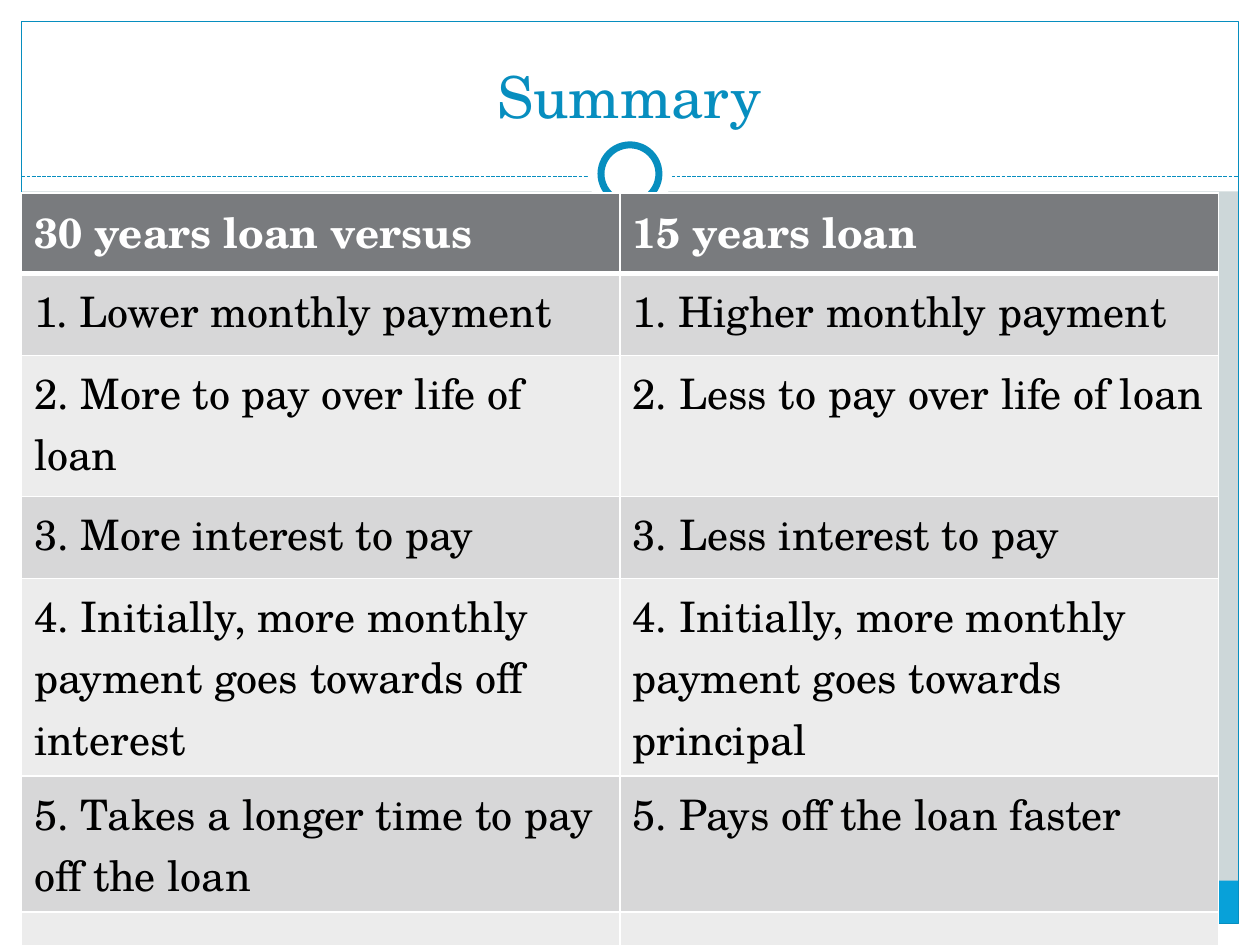
from dataclasses import dataclass

from lxml import etree
from pptx import Presentation
from pptx import util as u
from pptx.dml.color import RGBColor
from pptx.enum import dml, shapes, text
from pptx.oxml import ns


@dataclass(frozen=True)
class Theme:
    font: str = "TeX Gyre Schola"
    background: str = "CDD7D9"
    white: str = "FFFFFF"
    black: str = "000000"
    accent: str = "078EBF"
    footer: str = "08A1D9"
    header: str = "797B7E"
    bands: tuple = ("D7D7D8", "ECECEC")
    title_size: int = 33
    table_size: int = 24


THEME = Theme()
WIDTH, HEIGHT, MARGIN = 10, 7.5, 0.17
INNER_WIDTH = WIDTH - 2 * MARGIN
DIVIDER_Y = 1.4
RING_Y = 1.38

ROWS = (
    ("30 years loan versus", "15 years loan"),
    ("1. Lower monthly payment", "1. Higher monthly payment"),
    ("2. More to pay over life of loan", "2. Less to pay over life of loan"),
    ("3. More interest to pay", "3. Less interest to pay"),
    ("4. Initially, more monthly payment goes towards off interest",
     "4. Initially, more monthly payment goes towards principal"),
    ("5. Takes a longer time to pay off the loan", "5. Pays off the loan faster"),
    ("", ""),
)
# Each row is tall enough for its wrapped lines.
ROW_HEIGHTS = (0.64, 0.65, 1.12, 0.65, 1.57, 1.08, 0.65)


def rgb(color):
    return RGBColor.from_string(color)


def set_values(target, values):
    for name, value in values.items():
        setattr(target, name, value)


def add_block(slide, box, fill=None, line=None, weight=0.75,
              kind=shapes.MSO_SHAPE.RECTANGLE):
    shape = slide.shapes.add_shape(kind, *map(u.Inches, box))
    shape.shadow.inherit = False
    if fill:
        shape.fill.solid()
        shape.fill.fore_color.rgb = rgb(fill)
    else:
        shape.fill.background()
    if line:
        shape.line.color.rgb = rgb(line)
        shape.line.width = u.Pt(weight)
    else:
        shape.line.fill.background()


def add_circle(slide, diameter, **style):
    """Add a circle centred on the divider."""
    box = ((WIDTH - diameter) / 2, RING_Y - diameter / 2, diameter, diameter)
    add_block(slide, box, kind=shapes.MSO_SHAPE.OVAL, **style)


def add_divider(slide):
    ends = (MARGIN, DIVIDER_Y, WIDTH - MARGIN, DIVIDER_Y)
    line = slide.shapes.add_connector(
        shapes.MSO_CONNECTOR.STRAIGHT, *map(u.Inches, ends))
    line.line.color.rgb = rgb(THEME.accent)
    set_values(line.line, {"width": u.Pt(0.75),
                           "dash_style": dml.MSO_LINE.SQUARE_DOT})
    etree.SubElement(line._element.spPr, ns.qn("a:effectLst"))


def write(paragraph, words, size, color, bold=False):
    run = paragraph.add_run()
    run.text = words
    set_values(run.font, {"name": THEME.font, "size": u.Pt(size), "bold": bold})
    run.font.color.rgb = rgb(color)


def add_title(slide, words):
    box = slide.shapes.add_textbox(*map(u.Inches, (0.33, 0.25, 9.33, 0.83)))
    set_values(box.text_frame, {"word_wrap": True,
                                "vertical_anchor": text.MSO_ANCHOR.BOTTOM})
    paragraph = box.text_frame.paragraphs[0]
    paragraph.alignment = text.PP_ALIGN.CENTER
    write(paragraph, words, THEME.title_size, THEME.accent)


def set_borders(cell, bottom):
    """Draw white cell borders; they must precede the fill in the cell XML."""
    properties = cell._tc.get_or_add_tcPr()
    weights = {"lnL": 1, "lnR": 1, "lnT": 1, "lnB": bottom}
    for position, (side, weight) in enumerate(weights.items()):
        border = etree.Element(ns.qn(f"a:{side}"), w=str(u.Pt(weight)))
        fill = etree.SubElement(border, ns.qn("a:solidFill"))
        etree.SubElement(fill, ns.qn("a:srgbClr"), val=THEME.white)
        properties.insert(position, border)


def fill_cell(cell, words, row):
    is_header = row == 0
    cell.fill.solid()
    cell.fill.fore_color.rgb = rgb(
        THEME.header if is_header else THEME.bands[(row - 1) % 2])
    set_borders(cell, bottom=3 if is_header else 1)
    if words:
        color = THEME.white if is_header else THEME.black
        write(cell.text_frame.paragraphs[0], words, THEME.table_size, color,
              bold=is_header)


def add_comparison(slide):
    box = (MARGIN, 1.53, 9.5, sum(ROW_HEIGHTS))
    table = slide.shapes.add_table(
        len(ROWS), len(ROWS[0]), *map(u.Inches, box)).table
    for row, (words, height) in enumerate(zip(ROWS, ROW_HEIGHTS)):
        table.rows[row].height = u.Inches(height)
        for column, entry in enumerate(words):
            fill_cell(table.cell(row, column), entry, row)


def add_frame(slide):
    margins = (
        (0, HEIGHT - MARGIN, WIDTH, MARGIN),
        (0, 0, WIDTH, 1.52),
        (0, 0, MARGIN, HEIGHT),
        (WIDTH - MARGIN, 0, MARGIN, HEIGHT),
    )
    for box in margins:
        add_block(slide, box, fill=THEME.white)
    add_block(slide, (MARGIN, 6.99, INNER_WIDTH, 0.34), fill=THEME.footer)
    add_block(slide, (MARGIN, MARGIN, INNER_WIDTH, HEIGHT - 2 * MARGIN),
              line=THEME.accent)
    add_divider(slide)
    add_circle(slide, 0.67, fill=THEME.white)
    add_circle(slide, 0.46, fill=THEME.white, line=THEME.accent, weight=4)


def main():
    presentation = Presentation()
    set_values(presentation, {"slide_width": u.Inches(WIDTH),
                              "slide_height": u.Inches(HEIGHT)})
    slide = presentation.slides.add_slide(presentation.slide_layouts[6])
    slide.background.fill.solid()
    slide.background.fill.fore_color.rgb = rgb(THEME.background)
    add_frame(slide)
    add_title(slide, "Summary")
    add_comparison(slide)
    presentation.save("out.pptx")


if __name__ == "__main__":
    main()
